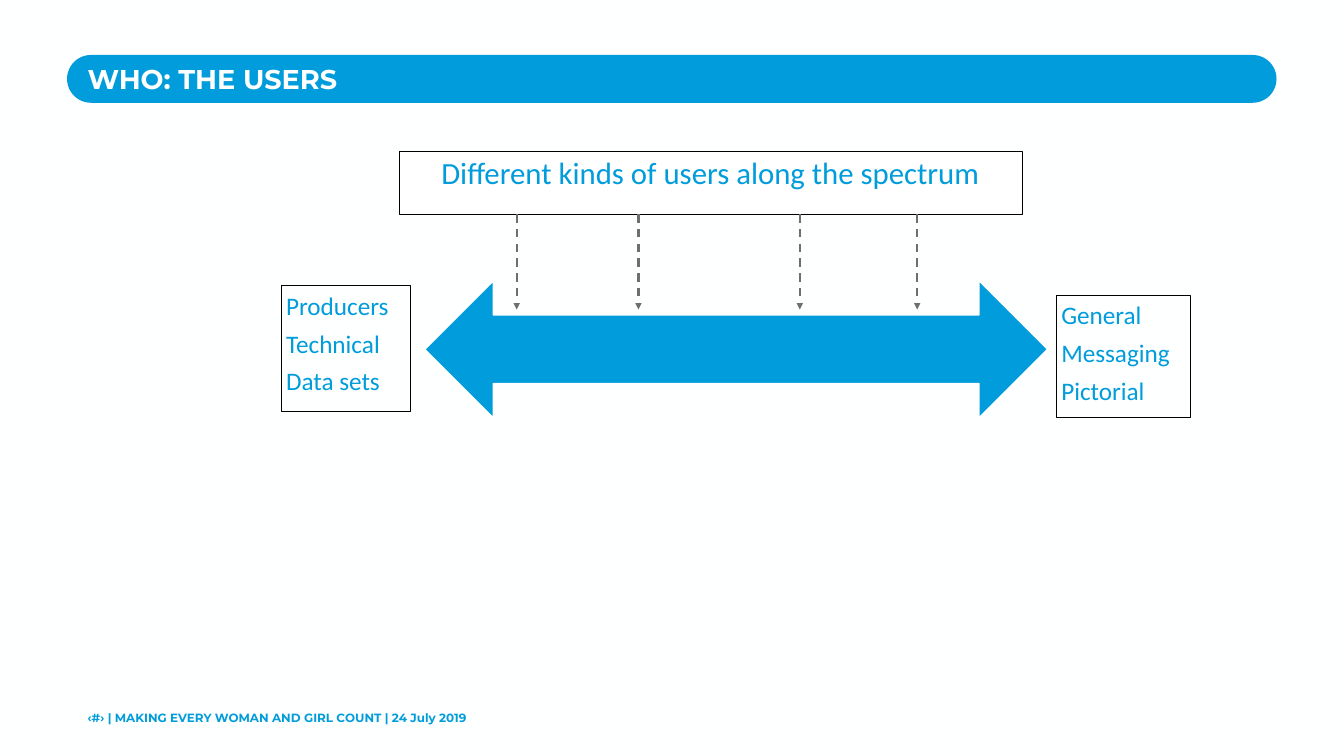
from lxml import etree
from pptx import Presentation
from pptx.dml.color import RGBColor
from pptx.enum.dml import MSO_LINE
from pptx.enum.shapes import MSO_CONNECTOR, MSO_SHAPE
from pptx.enum.text import MSO_ANCHOR, MSO_AUTO_SIZE, PP_ALIGN
from pptx.oxml.ns import qn
from pptx.util import Cm, Pt

BLUE = RGBColor(0x00, 0x9C, 0xDB)
PAPER = RGBColor(0xFE, 0xFF, 0xFF)
WHITE = RGBColor(0xFF, 0xFF, 0xFF)
BLACK = RGBColor(0x00, 0x00, 0x00)
GREY = RGBColor(0x6D, 0x6E, 0x70)
HEADING_FONT = "Montserrat"
BODY_FONT = "Calibri"
LEFT, CENTER = PP_ALIGN.LEFT, PP_ALIGN.CENTER
TOP = MSO_ANCHOR.TOP
NO_AUTOFIT = MSO_AUTO_SIZE.NONE
DASH = MSO_LINE.DASH
STRAIGHT = MSO_CONNECTOR.STRAIGHT
RECTANGLE = MSO_SHAPE.RECTANGLE
ROUNDED_RECTANGLE = MSO_SHAPE.ROUNDED_RECTANGLE
DOUBLE_ARROW = MSO_SHAPE.LEFT_RIGHT_ARROW


class SlideBuilder:
    def __init__(self, slide):
        self.slide = slide
        slide.background.fill.solid()
        slide.background.fill.fore_color.rgb = PAPER

    def shape(self, kind, left, top, width, height, fill, line=None, line_width=0.5):
        shape = self.slide.shapes.add_shape(
            kind, Cm(left), Cm(top), Cm(width), Cm(height))
        shape.shadow.inherit = False
        shape.fill.solid()
        shape.fill.fore_color.rgb = fill
        if line is None:
            shape.line.fill.background()
        else:
            shape.line.color.rgb = line
            shape.line.width = Pt(line_width)
        return shape

    def set_text(self, shape, lines, size, font, color=BLUE, bold=False, align=LEFT):
        frame = shape.text_frame
        frame.text = "\n".join(lines)
        frame.word_wrap = True
        frame.auto_size = NO_AUTOFIT
        frame.vertical_anchor = TOP
        for paragraph in frame.paragraphs:
            paragraph.alignment = align
            paragraph.font.name = font
            paragraph.font.size = Pt(size)
            paragraph.font.bold = bold
            paragraph.font.color.rgb = color
        return frame

    def heading(self, shape, text, size, color):
        """Set one bold line that starts at the very edge of the shape."""
        frame = self.set_text(shape, [text], size, HEADING_FONT, color, bold=True)
        frame.margin_left = frame.margin_right = 0
        frame.margin_top = frame.margin_bottom = 0

    def title(self, text):
        bar = self.shape(ROUNDED_RECTANGLE, 3.38, 2.77, 60.96, 2.41, BLUE)
        bar.adjustments[0] = 0.5
        title = self.slide.shapes.title
        title.left, title.top = Cm(4.42), Cm(3.12)
        title.width, title.height = Cm(56.6), Cm(1.65)
        self.heading(title, text, 38.8, PAPER)
        bar.element.addnext(title.element)  # keeps the title in front of its bar

    def footer(self, text):
        box = self.slide.shapes.add_textbox(Cm(4.42), Cm(35.79), Cm(36.12), Cm(0.74))
        self.heading(box, text, 17, BLUE)

    def caption(self, text, left, top, width, height):
        box = self.shape(RECTANGLE, left, top, width, height, WHITE, BLACK)
        self.set_text(box, [text], 44, BODY_FONT, align=CENTER)

    def user_group(self, lines, left, top, width, height):
        box = self.shape(RECTANGLE, left, top, width, height, PAPER, BLACK)
        frame = self.set_text(box, lines, 36, BODY_FONT)
        for paragraph in frame.paragraphs:
            paragraph.line_spacing = 1.07
            paragraph.space_after = Pt(8)

    def down_arrow(self, x, top, bottom):
        arrow = self.slide.shapes.add_connector(
            STRAIGHT, Cm(x), Cm(top), Cm(x), Cm(bottom))
        arrow.line.color.rgb = GREY
        arrow.line.width = Pt(3)
        arrow.line.dash_style = DASH
        properties = arrow.element.spPr
        etree.SubElement(properties.find(qn("a:ln")), qn("a:tailEnd"), type="triangle")
        etree.SubElement(properties, qn("a:effectLst"))


def main():
    presentation = Presentation()
    presentation.slide_width = Cm(67.74)
    presentation.slide_height = Cm(38.1)
    title_only = presentation.slide_layouts[5]
    builder = SlideBuilder(presentation.slides.add_slide(title_only))

    builder.title("WHO: THE USERS")
    builder.footer("‹#› | MAKING EVERY WOMAN AND GIRL COUNT | 24 July 2019")
    builder.caption("Different kinds of users along the spectrum", 20.12, 7.62, 31.39, 3.18)
    builder.shape(DOUBLE_ARROW, 21.41, 14.15, 31.39, 6.91, BLUE, PAPER, 2)
    for x in (26.04, 32.18, 40.31, 46.23):
        builder.down_arrow(x, 10.8, 15.6)
    builder.user_group(["Producers", "Technical", "Data sets"], 14.17, 14.38, 6.5, 6.35)
    builder.user_group(["General", "Messaging", "Pictorial"], 53.24, 14.86, 6.73, 6.17)

    presentation.save("out.pptx")


if __name__ == "__main__":
    main()
